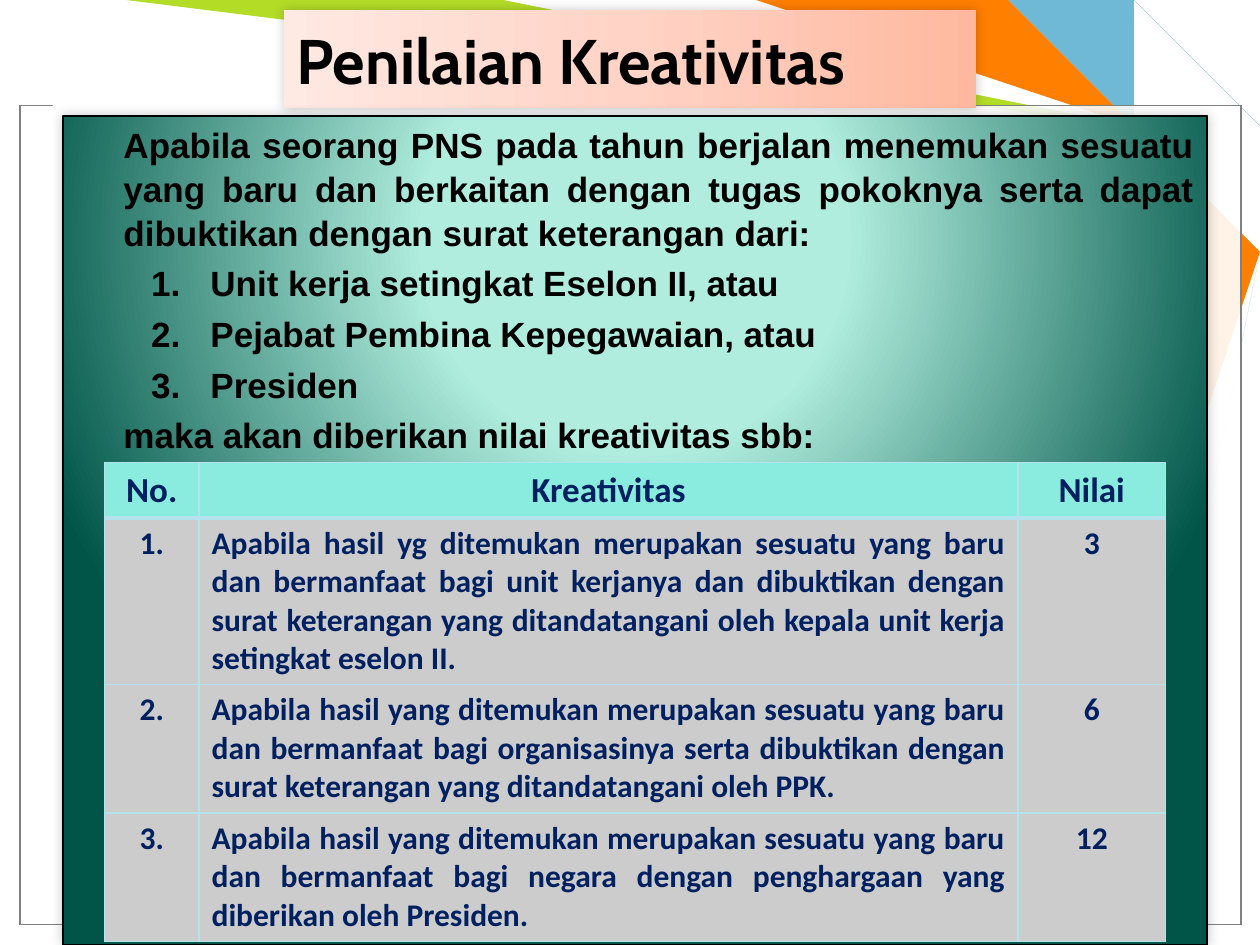
import pptx
import pptx.chart.data
import pptx.dml.color
import pptx.enum.text
import pptx.oxml
import pptx.oxml.ns
import pptx.util

ALIGN = pptx.enum.text.PP_ALIGN
ANCHOR = pptx.enum.text.MSO_ANCHOR
RECT = 1
INCH = pptx.util.Inches(1)
NS = pptx.oxml.ns.nsdecls("a")

RIBBONS = [
    ("6FB9D7", [(8.92, 0), (9.29, .77), (9.58, 1.67), (9.11, 7.49), (8.56, 7.49), (9.5, 1.67), (9.17, .75), (8.38, 0)]),
    ("B3DC27", [(1.17, 0), (3.83, 0), (9.14, .78), (9.42, 1.69), (7.42, 7.5), (6.92, 7.5), (9.35, 1.73), (9.01, .91)]),
    ("E0E0E0", [(6.67, 7.5), (9.27, 1.81), (6, 7.5)]),
    ("FFFFFF", [(3.75, 0), (9.1, .82), (9.32, 1.62), (6.75, 7.5), (7, 7.5), (9.41, 1.58), (9.17, .75), (6, 0)]),
    ("B4E3EE", [(9.25, 0), (9.17, .17), (9.78, 1.2), (10, 1.25), (10, 1), (9.25, .17), (9.32, 0)]),
    ("189180", [(10, .83), (9.42, .25), (10, .67)]),
    ("FF7F00", [(6.08, 0), (7.92, 0), (9.3, .7), (9.66, 1.69), (8.33, 7.5), (7.33, 7.5), (9.42, 1.58), (9.17, .75)]),
    ("F93D17", [(7.32, 7.5), (9.32, 1.83), (7.49, 7.5)]),
]
FRAME = (.16, .84, 9.69, 6.5)
PANELS = [(FRAME, 69, "000000"), (FRAME, 69, "808080"), ((.42, .74, 6.83, .17), 100, None)]

TITLE = "Penilaian Kreativitas"
BODY = [
    ("Apabila seorang PNS pada tahun berjalan menemukan sesuatu yang baru dan berkaitan dengan tugas "
     "pokoknya serta dapat dibuktikan dengan surat keterangan dari:", False),
    ("Unit kerja setingkat Eselon II, atau", True),
    ("Pejabat Pembina Kepegawaian, atau", True),
    ("Presiden", True),
    ("maka akan diberikan nilai kreativitas sbb:", False),
]
ROWS = [
    ("No.", "Kreativitas", "Nilai"),
    ("1.", "Apabila hasil yg ditemukan merupakan sesuatu yang baru dan bermanfaat bagi unit kerjanya dan "
     "dibuktikan dengan surat keterangan yang ditandatangani oleh kepala unit kerja setingkat eselon II.", "3"),
    ("2.", "Apabila hasil yang ditemukan merupakan sesuatu yang baru dan bermanfaat bagi organisasinya serta "
     "dibuktikan dengan surat keterangan yang ditandatangani oleh PPK.", "6"),
    ("3.", "Apabila hasil yang ditemukan merupakan sesuatu yang baru dan bermanfaat bagi negara dengan "
     "penghargaan yang diberikan oleh Presiden.", "12"),
]
COL_WIDTHS = (.75, 6.5, 1.17)
ROW_HEIGHTS = (.43, 1.32, 1.02, 1.02)
TITLE_STOPS = [(0, "FFB8A0"), (50, "FFD3C5"), (100, "FFE9E3")]
BODY_STOPS = [(0, "B0EDDE"), (30, "B0EDDE"), (90, "005548"), (100, "005548")]


def color(value):
    return pptx.dml.color.RGBColor.from_string(value)


def xml(text):
    return pptx.oxml.parse_xml(text.replace(">", f" {NS}>", 1) if "/>" not in text.split(">")[0] + ">"
                               else text.replace("/>", f" {NS}/>", 1))


def paint(shape, fill, line=None):
    shape.fill.solid()
    shape.fill.fore_color.rgb = color(fill)
    outline(shape, line)
    shape.shadow.inherit = False


def outline(shape, line):
    if line:
        shape.line.color.rgb = color(line)
        shape.line.width = pptx.util.Pt(.75)
    else:
        shape.line.fill.background()


def glow_panel(shape, box, stops, direction, line=None):
    place(shape, box)
    shape.fill.gradient()
    outline(shape, line)
    props = shape._element.spPr
    grad = props.find(pptx.oxml.ns.qn("a:gradFill"))
    marks = "".join(f'<a:gs pos="{p * 1000}"><a:srgbClr val="{c}"/></a:gs>' for p, c in stops)
    props.replace(grad, xml(f'<a:gradFill rotWithShape="1"><a:gsLst>{marks}</a:gsLst>{direction}</a:gradFill>'))
    props.append(xml('<a:effectLst><a:outerShdw blurRad="76200" dist="0" dir="13500000"><a:srgbClr val="000000">'
                     '<a:alpha val="20000"/></a:srgbClr></a:outerShdw></a:effectLst>'))


def place(shape, box):
    for name, value in zip(("left", "top", "width", "height"), box):
        setattr(shape, name, pptx.util.Inches(value))


def write(p, text, align, font, size, ink):
    p.alignment = align
    r = p.add_run()
    r.text = text
    for name, value in {"name": font, "size": pptx.util.Pt(size), "bold": True}.items():
        setattr(r.font, name, value)
    r.font.color.rgb = color(ink)


def add_background(s):
    for fill, points in RIBBONS:
        builder = s.shapes.build_freeform(*points[0], scale=INCH)
        builder.add_line_segments(points[1:], close=True)
        paint(builder.convert_to_shape(), fill)
    for box, opacity, line in PANELS:
        panel = s.shapes.add_shape(RECT, *map(pptx.util.Inches, box))
        paint(panel, "FFFFFF", line)
        solid = panel._element.spPr.find(pptx.oxml.ns.qn("a:solidFill"))
        solid[0].append(xml(f'<a:alpha val="{opacity * 1000}"/>'))


def add_title_and_body(s):
    title, body = s.shapes.title, s.placeholders[1]
    for sp in (title, body):
        s.shapes._spTree.append(sp._element)
        sp.text_frame.word_wrap = True
        sp.text_frame.auto_size = pptx.enum.text.MSO_AUTO_SIZE.NONE
    glow_panel(title, (2.25, .08, 5.5, .78), TITLE_STOPS, '<a:lin ang="10800000" scaled="0"/>')
    title.text_frame.vertical_anchor = ANCHOR.MIDDLE
    write(title.text_frame.paragraphs[0], TITLE, ALIGN.LEFT, "Cabin", 36, "000000")

    glow_panel(body, (.5, .92, 9.08, 6.58), BODY_STOPS,
               '<a:path path="circle"><a:fillToRect l="50000" t="15000" r="50000" b="85000"/></a:path>', "000000")
    tf = body.text_frame
    for i, (text, numbered) in enumerate(BODY):
        p = tf.add_paragraph() if i else tf.paragraphs[0]
        props = p._p.get_or_add_pPr()
        props.set("marL", str(int((1.07 if numbered else .38) * INCH)))
        props.set("indent", str(int((-.47 if numbered else 0) * INCH)))
        if numbered:
            props.append(xml('<a:buFont typeface="+mj-lt"/>'))
        props.append(xml('<a:buAutoNum type="arabicPeriod"/>' if numbered else '<a:buNone/>'))
        p.space_before = pptx.util.Pt(4 if i else 0)
        p.line_spacing = 1.04
        write(p, text, ALIGN.JUSTIFY, "Arial", 20, "000000")


def add_score_table(s):
    box = (.83, 3.67, sum(COL_WIDTHS), sum(ROW_HEIGHTS))
    table = s.shapes.add_table(len(ROWS), len(COL_WIDTHS), *map(pptx.util.Inches, box)).table
    table.horz_banding = False
    for col, width in zip(table.columns, COL_WIDTHS):
        col.width = pptx.util.Inches(width)
    for i, (row, height, texts) in enumerate(zip(table.rows, ROW_HEIGHTS, ROWS)):
        row.height = pptx.util.Inches(height)
        for j, (cell, text) in enumerate(zip(row.cells, texts)):
            cell.fill.solid()
            cell.fill.fore_color.rgb = color("CCCCCC" if i else "8AECDE")
            align = ALIGN.JUSTIFY if i and j == 1 else ALIGN.CENTER
            write(cell.text_frame.paragraphs[0], text, align, "Calibri", 18 if i else 20, "002060")
            for k, side in enumerate("LRTB"):
                width = 3 if (i, side) in ((0, "B"), (1, "T")) else 1
                cell._tc.get_or_add_tcPr().insert(k, xml(
                    f'<a:ln{side} w="{width * 12700}"><a:solidFill><a:srgbClr val="B4E3EE"/></a:solidFill></a:ln{side}>'))


def main():
    """Build the creativity assessment slide."""
    prs = pptx.Presentation()
    prs.slide_width, prs.slide_height = pptx.util.Inches(10), pptx.util.Inches(7.5)
    s = prs.slides.add_slide(prs.slide_layouts[1])
    add_background(s)
    add_title_and_body(s)
    add_score_table(s)
    prs.save("out.pptx")


if __name__ == "__main__":
    main()
